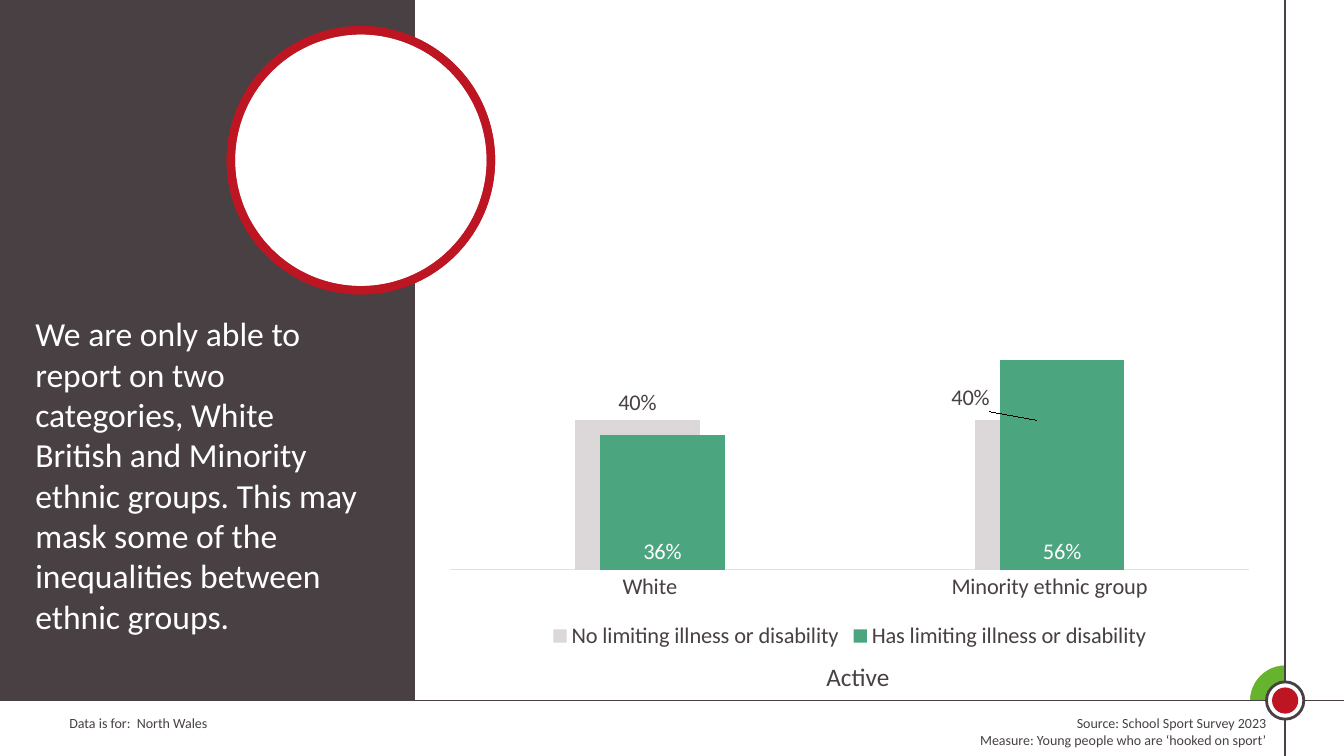
import pptx
import pptx.chart.data
import pptx.dml.color
import pptx.enum.chart
import pptx.enum.shapes
import pptx.enum.text
import pptx.oxml
import pptx.oxml.ns
import pptx.util

COLS, ROWS = 160, 90
CELL = pptx.util.Inches(1) / 12
DARK, RED, GREEN, LIME = "484043", "BD1622", "4BA57E", "66B42D"
PALE, RULE, WHITE = "DCD7D9", "E5E1E3", "FFFFFF"
KIND = pptx.enum.shapes.MSO_SHAPE
ALIGN = pptx.enum.text.PP_ALIGN
SPOT = pptx.enum.chart.XL_LABEL_POSITION


def shade(code):
    """Turn a hex string into a colour."""
    return pptx.dml.color.RGBColor.from_string(code)


def cells(*nums):
    """Turn grid counts into lengths."""
    return [pptx.util.Emu(round(n * CELL)) for n in nums]


def apply(item, look):
    """Set each attribute of a format dict."""
    for key, val in look.items():
        setattr(item, key, val)


def style(font, size, code):
    """Format a font."""
    apply(font, {"name": "Calibri", "size": pptx.util.Pt(size)})
    font.color.rgb = shade(code)


def stroke(line, code, width):
    """Format a line."""
    line.color.rgb = shade(code)
    line.width = pptx.util.Pt(width)


def draw(slide, kind, box, fill, edge=None, width=0):
    """Add a flat shape."""
    shape = slide.shapes.add_shape(kind, *cells(*box))
    shape.shadow.inherit = False
    shape.fill.solid()
    shape.fill.fore_color.rgb = shade(fill)
    if edge:
        stroke(shape.line, edge, width)
    else:
        shape.line.fill.background()
    return shape


def disc(slide, mid, rad, *look):
    """Add a circle around a point."""
    box = (mid[0] - rad, mid[1] - rad, 2 * rad, 2 * rad)
    return draw(slide, KIND.OVAL, box, *look)


def fill_text(shape, lines, size, code, align=ALIGN.LEFT):
    """Write lines into a frame."""
    frame = shape.text_frame
    apply(frame, {"word_wrap": True, "text": "\n".join(lines),
                  "auto_size": pptx.enum.text.MSO_AUTO_SIZE.NONE,
                  "vertical_anchor": pptx.enum.text.MSO_ANCHOR.TOP})
    for para in frame.paragraphs:
        para.alignment = align
        style(para.runs[0].font, size, code)


def note(slide, box, *args):
    """Add a text box."""
    fill_text(slide.shapes.add_textbox(*cells(*box)), *args)


def corner(slide, mid):
    """Draw the crossing rules and their badge."""
    x, y = mid
    rad = 4.32
    pie = draw(slide, KIND.PIE, (x - rad, y - rad, 2 * rad, 2 * rad), LIME, WHITE, 1.5)
    pie.adjustments[0], pie.adjustments[1] = 106.62, 162
    for ends in ((x, 0, x, ROWS), (0, y, COLS, y)):
        rule = slide.shapes.add_connector(pptx.enum.shapes.MSO_CONNECTOR.STRAIGHT, *cells(*ends))
        stroke(rule.line, DARK, 1)
        props = rule._element.spPr
        props.append(props.makeelement(pptx.oxml.ns.qn("a:effectLst")))
    disc(slide, mid, 2.22, WHITE, DARK, 2)
    disc(slide, mid, 1.56, RED)


def footer(slide, box):
    """Write the data notes below the rule."""
    x, y, w, h = box
    top = y + 0.16 * h
    note(slide, (x + 7.08, top, 0.33 * w, 0.49 * h), ["Data is for:  North Wales"], 10, DARK)
    note(slide, (x + 74.28, top, 77.64, 0.8 * h),
         ["Source: School Sport Survey 2023", "Measure: Young people who are ‘hooked on sport’"],
         10, DARK, ALIGN.RIGHT)


def panel(slide, box):
    """Draw the dark side with its ring and statement."""
    x, y, w, h = box
    draw(slide, KIND.RECTANGLE, box, DARK)
    for alpha in (100, 20):
        ring = disc(slide, (x + 42.96, y + 19.08), 15.48, WHITE, RED, 6)
        tint = ring._element.spPr.find(".//" + pptx.oxml.ns.qn("a:srgbClr"))
        tint.append(tint.makeelement(pptx.oxml.ns.qn("a:alpha"), {"val": str(alpha * 1000)}))
    title = slide.shapes.title
    spot = cells(x + 3, y + 0.44 * h, 41.16, 0.54 * h)
    apply(title, dict(zip(("left", "top", "width", "height"), spot)))
    fill_text(title, ["We are only able to report on two categories, White British and "
                      "Minority ethnic groups. This may mask some of the inequalities "
                      "between ethnic groups."], 24, WHITE)
    title._element.getparent().append(title._element)


def shift(label, dx, dy):
    """Move one label by shares of the chart."""
    style(label.font, 16, DARK)
    label.position = SPOT.OUTSIDE_END
    layout = pptx.oxml.parse_xml(
        f'<c:layout {pptx.oxml.ns.nsdecls("c")}><c:manualLayout>'
        f'<c:x val="{dx}"/><c:y val="{dy}"/></c:manualLayout></c:layout>')
    label._dLbl.find(pptx.oxml.ns.qn("c:idx")).addnext(layout)


def graph(slide, box):
    """Draw the column chart and its caption."""
    x, y, w, h = box
    note(slide, (x + 0.46 * w, y + h + 0.24, 14.64, 4.8), ["Active"], 18, DARK)
    data = pptx.chart.data.CategoryChartData(number_format="0%")
    data.categories = ["White", "Minority ethnic group"]
    data.add_series("No limiting illness or disability", (0.4, 0.4))
    data.add_series("Has limiting illness or disability", (0.36, 0.56))
    kind = pptx.enum.chart.XL_CHART_TYPE.COLUMN_CLUSTERED
    chart = slide.shapes.add_chart(kind, *cells(*box), data).chart
    apply(chart, {"has_title": False, "has_legend": True})
    style(chart.font, 16, DARK)
    apply(chart.legend, {"position": pptx.enum.chart.XL_LEGEND_POSITION.BOTTOM,
                         "include_in_layout": False})
    style(chart.legend.font, 16, DARK)
    apply(chart.value_axis, {"minimum_scale": 0, "maximum_scale": 1,
                             "has_major_gridlines": False, "visible": False})
    axis = chart.category_axis
    axis.major_tick_mark = pptx.enum.chart.XL_TICK_MARK.NONE
    style(axis.tick_labels.font, 16, DARK)
    stroke(axis.format.line, RULE, 0.75)
    plot = chart.plots[0]
    apply(plot, {"gap_width": 200, "overlap": 80, "vary_by_categories": False})
    looks = ((PALE, DARK, SPOT.OUTSIDE_END), (GREEN, WHITE, SPOT.INSIDE_BASE))
    for bars, (fill, ink, spot) in zip(plot.series, looks):
        bars.format.fill.solid()
        bars.format.fill.fore_color.rgb = shade(fill)
        apply(bars.data_labels, {"show_value": True, "position": spot, "number_format": "0%",
                                 "number_format_is_linked": False})
        style(bars.data_labels.font, 16, ink)
    shift(plot.series[0].points[1].data_label, -0.08, -0.01)


def main():
    """Build and save the slide."""
    deck = pptx.Presentation()
    deck.slide_width, deck.slide_height = cells(COLS, ROWS)
    slide = deck.slides.add_slide(deck.slide_layouts[5])
    base = 83.4
    corner(slide, (153, base))
    footer(slide, (0, base, COLS, ROWS - base))
    panel(slide, (0, 0, 49.4, base))
    graph(slide, (51.6, 22.2, 99.12, 55.68))
    deck.save("out.pptx")


if __name__ == "__main__":
    main()
